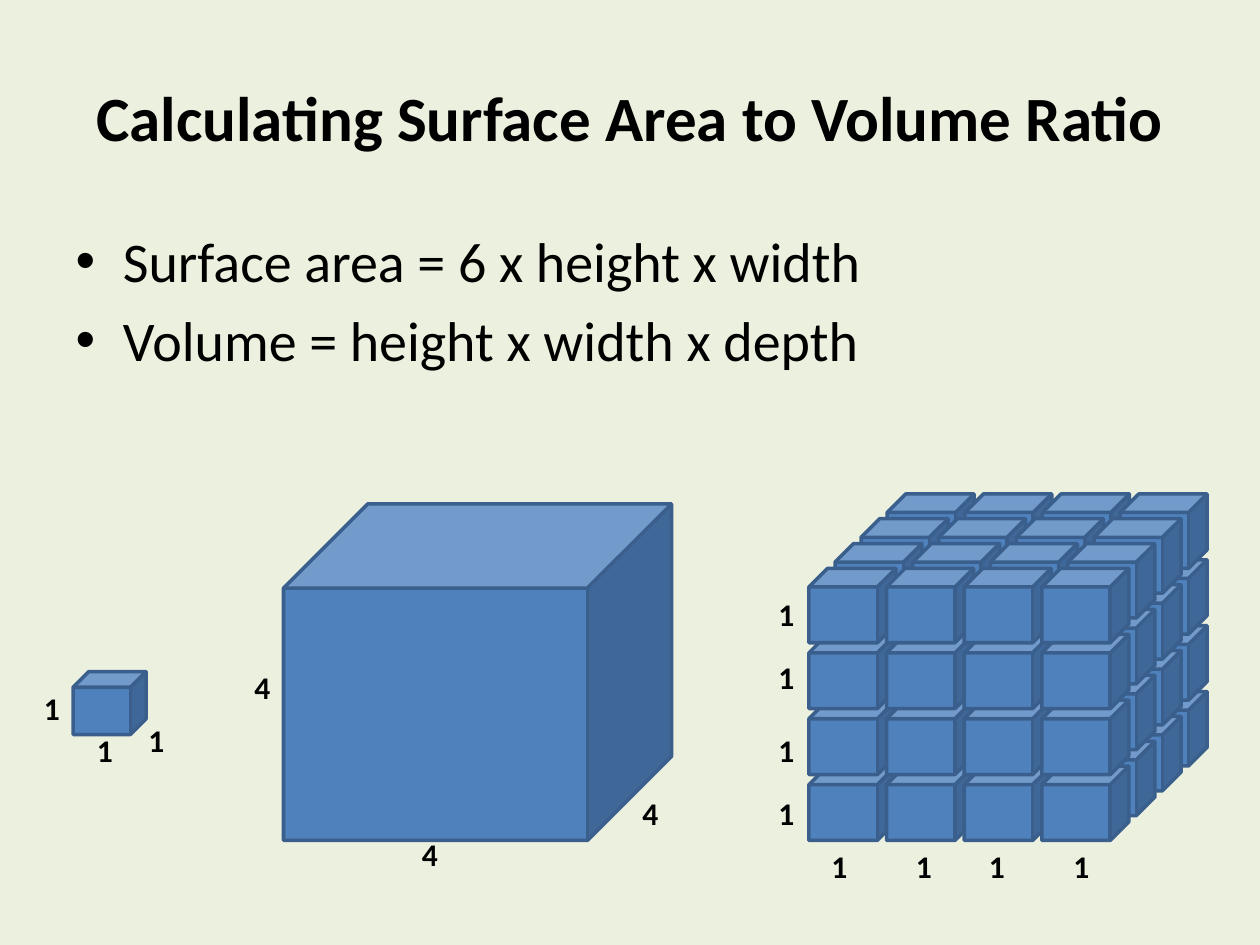
from pptx import Presentation
from pptx.dml.color import RGBColor
from pptx.enum.shapes import MSO_SHAPE
from pptx.enum.text import MSO_ANCHOR, MSO_AUTO_SIZE, PP_ALIGN
from pptx.util import Inches, Pt

COLORS = {"background": "EBF1DE", "cube": "4F81BD", "edge": "3A5F8C", "text": "000000"}
FONT = "Calibri"
CUBES_PER_SIDE = 4


def color(name):
    return RGBColor.from_string(COLORS[name])


def place(shape, box):
    shape.left, shape.top, shape.width, shape.height = map(Inches, box)


def format_runs(text_frame, size, bold=False):
    for paragraph in text_frame.paragraphs:
        for run in paragraph.runs:
            run.font.name = FONT
            run.font.size = Pt(size)
            run.font.bold = bold
            run.font.color.rgb = color("text")


def add_title(slide, box):
    title = slide.shapes.title
    place(title, box)
    title.text_frame.text = "Calculating Surface Area to Volume Ratio"
    title.text_frame.vertical_anchor = MSO_ANCHOR.MIDDLE
    title.text_frame.paragraphs[0].alignment = PP_ALIGN.CENTER
    format_runs(title.text_frame, 36, bold=True)


def add_formulas(slide, box):
    formulas = slide.placeholders[1]
    place(formulas, box)
    formulas.text_frame.text = (
        "Surface area = 6 x height x width\nVolume = height x width x depth"
    )
    format_runs(formulas.text_frame, 32)


def add_cube(shapes, box):
    cube = shapes.add_shape(MSO_SHAPE.CUBE, *map(Inches, box))
    cube.shadow.inherit = False
    cube.fill.solid()
    cube.fill.fore_color.rgb = color("cube")
    cube.line.color.rgb = color("edge")
    cube.line.width = Pt(2)


def add_lengths(slide, length, positions):
    """Label edges with their length at the given (left, top) positions."""
    for left, top in positions:
        label = slide.shapes.add_textbox(*map(Inches, (left, top, 0.33, 0.4)))
        label.text_frame.word_wrap = False
        label.text_frame.auto_size = MSO_AUTO_SIZE.SHAPE_TO_FIT_TEXT
        label.text_frame.text = length
        format_runs(label.text_frame, 18, bold=True)


def add_single_cube(slide, box, length, label_offsets):
    add_cube(slide.shapes, box)
    left, top = box[:2]
    add_lengths(slide, length, [(left + dx, top + dy) for dx, dy in label_offsets])


def add_divided_cube(slide, box):
    """Stack unit cubes from back to front, leaving out the concealed ones."""
    left, top, width, height = box
    unit_width, unit_height = 0.69, 0.59
    layer_dx, layer_dy = 0.207, 0.197
    last = CUBES_PER_SIDE - 1
    column_step = (width - unit_width) / last - layer_dx
    row_step = (height - unit_height) / last - layer_dy
    front_top = top + last * layer_dy

    group = slide.shapes.add_group_shape()
    for layer in reversed(range(CUBES_PER_SIDE)):
        for row in reversed(range(CUBES_PER_SIDE)):
            for column in range(CUBES_PER_SIDE):
                on_back_base = layer == last and row == last
                if layer == 0 or row == 0 or column == last or on_back_base:
                    x = left + column * column_step + layer * layer_dx
                    y = front_top + row * row_step - layer * layer_dy
                    add_cube(group.shapes, (x, y, unit_width, unit_height))

    heights = [(left - 0.34, y) for y in (4.67, 5.17, 5.75, 6.25)]
    widths = [(x, top + height) for x in (6.5, 7.17, 7.75, 8.42)]
    add_lengths(slide, "1", heights + widths)


def main():
    presentation = Presentation()
    presentation.slide_width, presentation.slide_height = Inches(10), Inches(7.5)
    slide = presentation.slides.add_slide(presentation.slide_layouts[1])
    slide.background.fill.solid()
    slide.background.fill.fore_color.rgb = color("background")

    add_title(slide, (0.5, 0.3, 9, 1.25))
    add_formulas(slide, (0.5, 1.75, 9, 4.95))
    add_single_cube(slide, (0.58, 5.33, 0.58, 0.5), "1",
                    [(-0.33, 0.09), (0.09, 0.42), (0.5, 0.34)])
    add_divided_cube(slide, (6.42, 3.92, 3.16, 2.75))
    add_single_cube(slide, (2.25, 4, 3.08, 2.67), "4",
                    [(1, 2.58), (2.75, 2.25), (-0.33, 1.25)])
    presentation.save("out.pptx")


if __name__ == "__main__":
    main()
